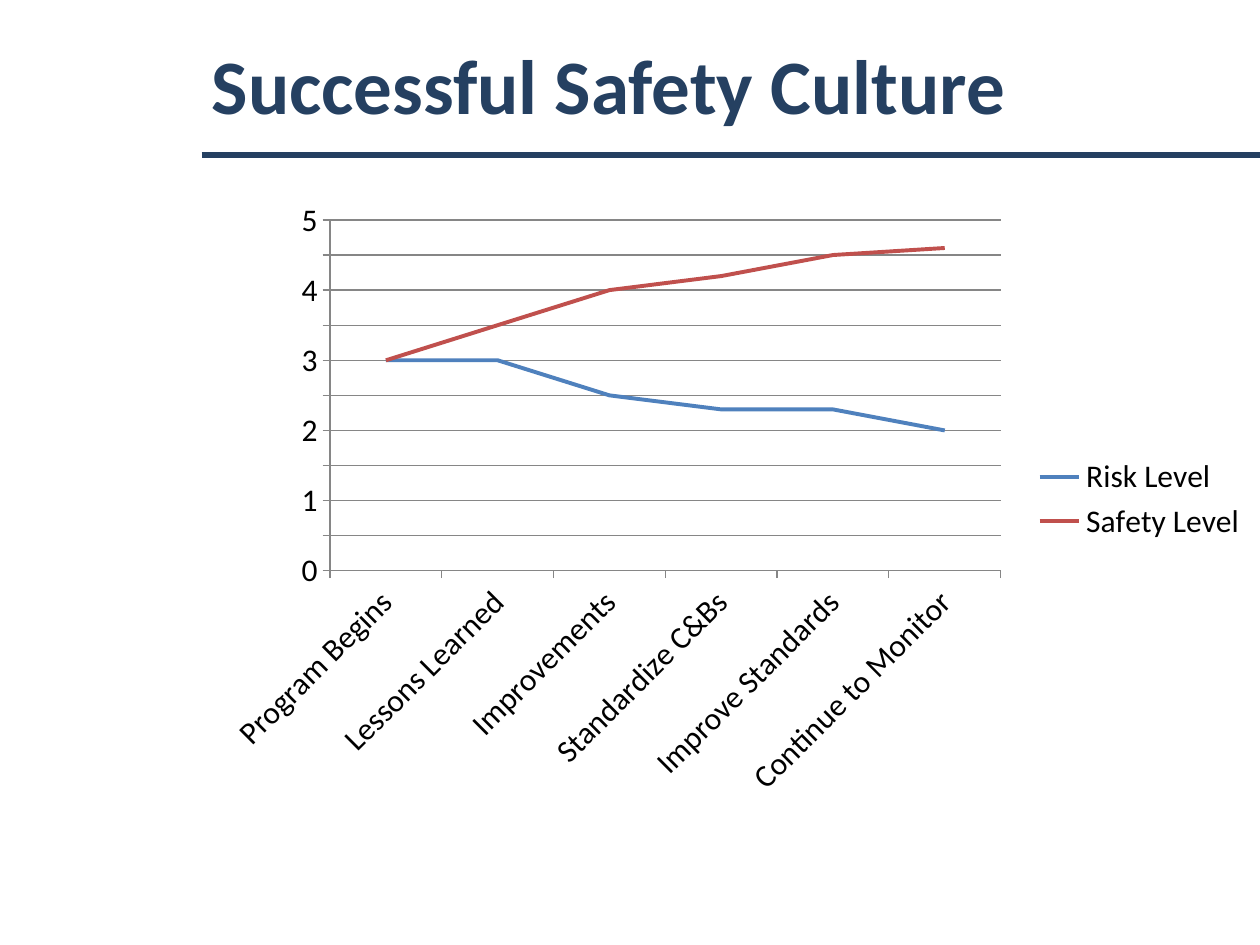
from pptx import Presentation
from pptx.chart.data import CategoryChartData
from pptx.dml.color import RGBColor
from pptx.enum.chart import XL_CHART_TYPE, XL_LEGEND_POSITION, XL_MARKER_STYLE, XL_TICK_MARK
from pptx.enum.shapes import MSO_CONNECTOR
from pptx.enum.text import MSO_ANCHOR, PP_ALIGN
from pptx.oxml import parse_xml
from pptx.oxml.ns import nsdecls, qn
from pptx.util import Inches, Pt

COLORS = {"navy": "254061", "text": "000000", "axis": "868686",
          "risk": "4F81BD", "safety": "C0504D"}
FONT = "Calibri"
TITLE_ONLY = 5


def rgb(name):
    return RGBColor.from_string(COLORS[name])


class Deck:
    """Holds the style and current slide; lengths are shares of the slide."""

    def __init__(self, width, height):
        self.prs = Presentation()
        self.prs.slide_width, self.prs.slide_height = Inches(width), Inches(height)
        self.s = self.prs.slides.add_slide(self.prs.slide_layouts[TITLE_ONLY])

    def box(self, x, y, w, h):
        width, height = self.prs.slide_width, self.prs.slide_height
        return int(x * width), int(y * height), int(w * width), int(h * height)

    def font(self, font, size, color, bold=False):
        font.name, font.size, font.bold = FONT, Pt(size), bold
        font.color.rgb = rgb(color)

    def title(self, text, area, size):
        sp = self.s.shapes.title
        sp.left, sp.top, sp.width, sp.height = self.box(*area)
        tf = sp.text_frame
        tf.word_wrap, tf.vertical_anchor = True, MSO_ANCHOR.MIDDLE
        p = tf.paragraphs[0]
        p.alignment = PP_ALIGN.LEFT
        r = p.add_run()
        r.text = text
        self.font(r.font, size, "navy", bold=True)

    def rule(self, x, y, length, weight):
        left, top, width, _ = self.box(x, y, length, 0)
        line = self.s.shapes.add_connector(MSO_CONNECTOR.STRAIGHT, left, top, left + width, top)
        line.line.color.rgb, line.line.width = rgb("navy"), Pt(weight)
        line._element.spPr.append(parse_xml(f"<a:effectLst {nsdecls('a')}/>"))

    def line_chart(self, categories, series, area, plot_area, size):
        data = CategoryChartData()
        data.categories = categories
        for name, values, _ in series:
            data.add_series(name, values)
        chart = self.s.shapes.add_chart(XL_CHART_TYPE.LINE, *self.box(*area), data).chart
        chart.has_title = False
        self.font(chart.font, size, "text")

        # Series
        plot = chart.plots[0]
        plot.vary_by_categories = False
        for ser, (_, _, color) in zip(plot.series, series):
            ser.smooth = False
            ser.marker.style = XL_MARKER_STYLE.NONE
            ser.format.line.color.rgb, ser.format.line.width = rgb(color), Pt(2.25)

        # Axes
        cat, val = chart.category_axis, chart.value_axis
        val.minimum_scale, val.maximum_scale, val.major_unit = 0, 5, 0.5
        val.has_major_gridlines = True
        for part in (cat, val, val.major_gridlines):
            part.format.line.color.rgb, part.format.line.width = rgb("axis"), Pt(0.75)
        for axis in (cat, val):
            axis.major_tick_mark = XL_TICK_MARK.OUTSIDE
            self.font(axis.tick_labels.font, size, "text")
        cat._element.find(qn("c:txPr")).find(qn("a:bodyPr")).set("rot", "-2700000")

        # Legend
        chart.has_legend = True
        chart.legend.position = XL_LEGEND_POSITION.RIGHT
        chart.legend.include_in_layout = False
        self.font(chart.legend.font, size, "text")

        # Inner plot area, as shares of the chart
        sizes = "".join(f'<c:{k} val="{v}"/>' for k, v in zip("xywh", plot_area))
        layout = parse_xml(
            f'<c:layout {nsdecls("c")}><c:manualLayout><c:layoutTarget val="inner"/>'
            f'<c:xMode val="edge"/><c:yMode val="edge"/>{sizes}</c:manualLayout></c:layout>')
        plot_xml = chart._chartSpace.chart.plotArea
        for old in plot_xml.findall(qn("c:layout")):
            plot_xml.remove(old)
        plot_xml.insert(0, layout)


def main():
    deck = Deck(10, 7.5)

    # Heading and rule
    deck.rule(0.16, 0.164, 0.84, 3.25)

    # Risk against safety
    deck.line_chart(
        ["Program Begins", "Lessons Learned", "Improvements",
         "Standardize C&Bs", "Improve Standards", "Continue to Monitor"],
        [("Risk Level", (3, 3, 2.5, 2.3, 2.3, 2), "risk"),
         ("Safety Level", (3, 3.5, 4, 4.2, 4.5, 4.6), "safety")],
        area=(0.167, 0.2, 0.833, 0.656), plot_area=(0.114, 0.05, 0.639, 0.566), size=18)

    deck.title("Successful Safety Culture", (0.158, 0.005, 0.726, 0.167), 44)
    deck.prs.save("out.pptx")


if __name__ == "__main__":
    main()
